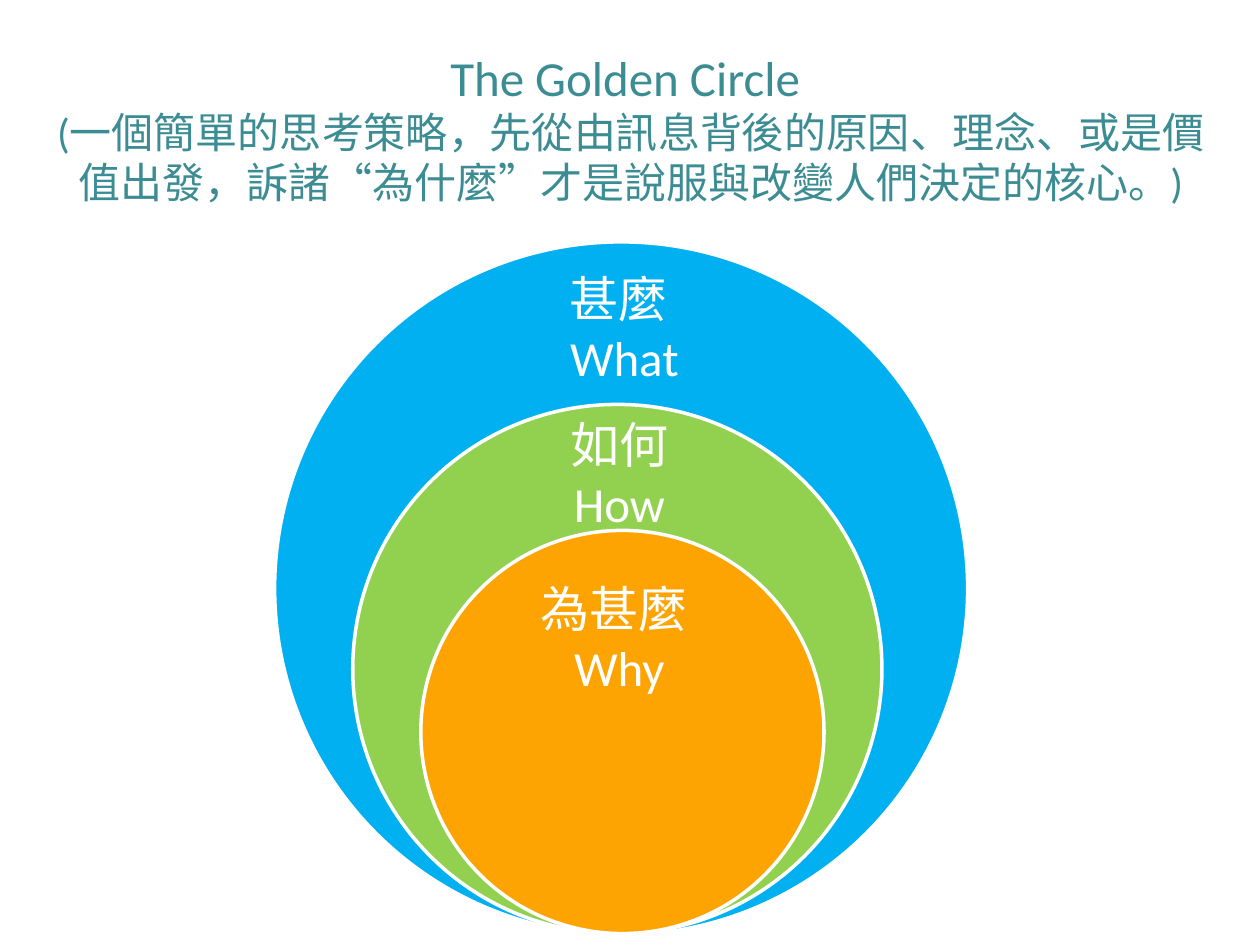
from dataclasses import dataclass

from pptx import Presentation
from pptx.dml.color import RGBColor
from pptx.enum.shapes import MSO_SHAPE
from pptx.enum.text import MSO_ANCHOR, PP_ALIGN
from pptx.util import Inches, Pt

ELLIPSE = MSO_SHAPE.OVAL
CENTER = PP_ALIGN.CENTER
TOP = MSO_ANCHOR.TOP
MIDDLE = MSO_ANCHOR.MIDDLE


@dataclass(frozen=True)
class Theme:
    font: str = "Calibri"
    white: str = "FFFFFF"
    teal: str = "3C8C93"
    blue: str = "00B0F0"
    green: str = "92D050"
    orange: str = "FEA402"
    large: int = 28
    medium: int = 24
    outline: int = 2


def add_text(p, text, *, font, size, color):
    r = p.add_run()
    r.text = text
    r.font.name = font
    r.font.size = Pt(size)
    r.font.color.rgb = RGBColor.from_string(color)


class SlideBuilder:
    def __init__(self, slide, theme):
        self.s = slide
        self.theme = theme

    def circle(self, left, top, diameter, color):
        sp = self.s.shapes.add_shape(
            ELLIPSE, Inches(left), Inches(top), Inches(diameter), Inches(diameter))
        sp.shadow.inherit = False
        sp.fill.solid()
        sp.fill.fore_color.rgb = RGBColor.from_string(color)
        sp.line.color.rgb = RGBColor.from_string(self.theme.white)
        sp.line.width = Pt(self.theme.outline)

    def text_frame(self, left, top, width, height, anchor=TOP):
        sp = self.s.shapes.add_textbox(
            Inches(left), Inches(top), Inches(width), Inches(height))
        tf = sp.text_frame
        tf.word_wrap = True
        tf.vertical_anchor = anchor
        tf.paragraphs[0].alignment = CENTER
        return tf

    def label(self, left, top, width, lines):
        tf = self.text_frame(left, top, width, 1.04)
        for i, line in enumerate(lines):
            p = tf.add_paragraph() if i else tf.paragraphs[0]
            p.alignment = CENTER
            add_text(p, line, font=self.theme.font, size=self.theme.large,
                     color=self.theme.white)

    def title(self, heading, subtitle):
        p = self.text_frame(0.28, 0.47, 9.45, 1.08, MIDDLE).paragraphs[0]
        style = {"font": self.theme.font, "color": self.theme.teal}
        add_text(p, heading, size=self.theme.large, **style)
        p.add_line_break()
        add_text(p, subtitle, size=self.theme.medium, **style)


def main():
    prs = Presentation()
    prs.slide_width = Inches(10)
    prs.slide_height = Inches(7.5)
    theme = Theme()
    builder = SlideBuilder(prs.slides.add_slide(prs.slide_layouts[6]), theme)

    builder.title(
        "The Golden Circle ",
        "(一個簡單的思考策略，先從由訊息背後的原因、理念、或是價值出發，"
        "訴諸“為什麼”才是說服與改變人們決定的核心。)")

    rings = [
        ((2.18, 1.92, 5.5, theme.blue), (3.96, 2.08, 1.99, ("甚麼 ", "What"))),
        ((2.8, 3.21, 4.2, theme.green), (3.87, 3.24, 2.09, ("如何", "How"))),
        ((3.34, 4.21, 3.2, theme.orange), (3.79, 4.54, 2.25, ("為甚麼 ", "Why"))),
    ]
    for circle, label in rings:
        builder.circle(*circle)
        builder.label(*label)

    prs.save("out.pptx")


if __name__ == "__main__":
    main()
